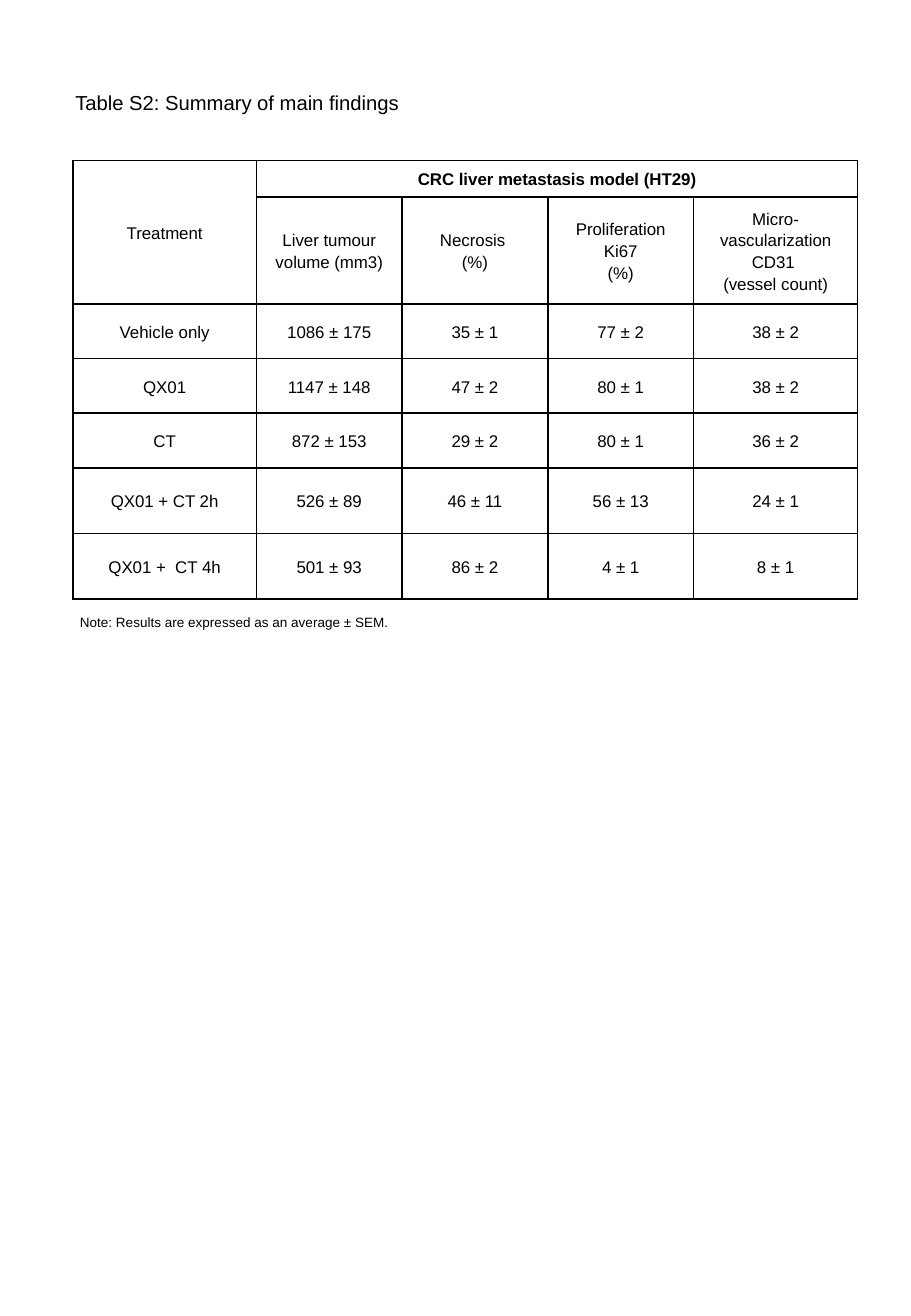
from lxml.etree import SubElement
from pptx import Presentation
from pptx.dml.color import RGBColor
from pptx.enum.text import MSO_ANCHOR, MSO_AUTO_SIZE, PP_ALIGN
from pptx.oxml.ns import qn
from pptx.util import Inches, Pt

BLACK = RGBColor(0x00, 0x00, 0x00)
FONT = "Arial"
COL_WIDTHS = [1.51, 1.2, 1.2, 1.2, 1.35]
ROW_HEIGHTS = [0.3, 0.88, 0.45, 0.45, 0.45, 0.54, 0.54]
FINDINGS = [
    ["Treatment", "CRC liver metastasis model (HT29)", "", "", ""],
    ["", "Liver tumour volume (mm3)", "Necrosis \n(%)",
     "Proliferation\nKi67\n(%)", "Micro-vascularization\nCD31 \n(vessel count)"],
    ["Vehicle only", "1086 ± 175", "35 ± 1", "77 ± 2", "38 ± 2"],
    ["QX01", "1147 ± 148", "47 ± 2", "80 ± 1", "38 ± 2"],
    ["CT", "872 ± 153", "29 ± 2", "80 ± 1", "36 ± 2"],
    ["QX01 + CT 2h", "526 ± 89", "46 ± 11", "56 ± 13", "24 ± 1"],
    ["QX01 +  CT 4h", "501 ± 93", "86 ± 2", "4 ± 1", "8 ± 1"],
]


def format_text(tf, size, align=PP_ALIGN.LEFT, bold=False, spacing=1.0):
    for p in tf.paragraphs:
        p.alignment = align
        p.line_spacing = spacing
        for r in p.runs:
            r.font.name = FONT
            r.font.size = Pt(size)
            r.font.bold = bold
            r.font.color.rgb = BLACK


def place_text(shape, text, left, top, width, height, size, wrap):
    shape.left, shape.top = Inches(left), Inches(top)
    shape.width, shape.height = Inches(width), Inches(height)
    tf = shape.text_frame
    tf.text = text
    tf.word_wrap = wrap
    tf.auto_size = MSO_AUTO_SIZE.SHAPE_TO_FIT_TEXT
    tf.vertical_anchor = MSO_ANCHOR.TOP
    format_text(tf, size)


def add_borders(cell):
    tcPr = cell._tc.get_or_add_tcPr()
    for side in ("a:lnL", "a:lnR", "a:lnT", "a:lnB"):
        ln = SubElement(tcPr, qn(side), w=str(Pt(1)))
        fill = SubElement(ln, qn("a:solidFill"))
        SubElement(fill, qn("a:srgbClr"), val=str(BLACK))


def fill_cell(cell, text, bold):
    cell.text = text
    cell.vertical_anchor = MSO_ANCHOR.MIDDLE
    cell.margin_left = cell.margin_right = Inches(0.06)
    cell.margin_top = cell.margin_bottom = 0
    format_text(cell.text_frame, 10, PP_ALIGN.CENTER, bold, 1.15)
    add_borders(cell)
    cell.fill.background()


def add_findings_table(s):
    frame = s.shapes.add_table(
        len(ROW_HEIGHTS), len(COL_WIDTHS), Inches(0.6), Inches(1.32),
        Inches(sum(COL_WIDTHS)), Inches(sum(ROW_HEIGHTS)))
    table = frame.table
    table.first_row = table.horz_banding = False
    for column, width in zip(table.columns, COL_WIDTHS):
        column.width = Inches(width)
    for row, height in zip(table.rows, ROW_HEIGHTS):
        row.height = Inches(height)
    for i, texts in enumerate(FINDINGS):
        for j, text in enumerate(texts):
            fill_cell(table.cell(i, j), text, bold=(i, j) == (0, 1))
    table.cell(0, 0).merge(table.cell(1, 0))
    table.cell(0, 1).merge(table.cell(0, 4))


def main():
    prs = Presentation()
    prs.slide_width, prs.slide_height = Inches(7.5), Inches(10.83)
    s = prs.slides.add_slide(prs.slide_layouts[5])
    add_findings_table(s)
    place_text(s.shapes.title, "Table S2: Summary of main findings",
               0.52, 0.69, 2.94, 0.3, size=12, wrap=False)
    note = s.shapes.add_textbox(0, 0, 0, 0)
    place_text(note, "Note: Results are expressed as an average ± SEM.",
               0.56, 5, 3.46, 0.24, size=8, wrap=True)
    prs.save("out.pptx")


if __name__ == "__main__":
    main()
